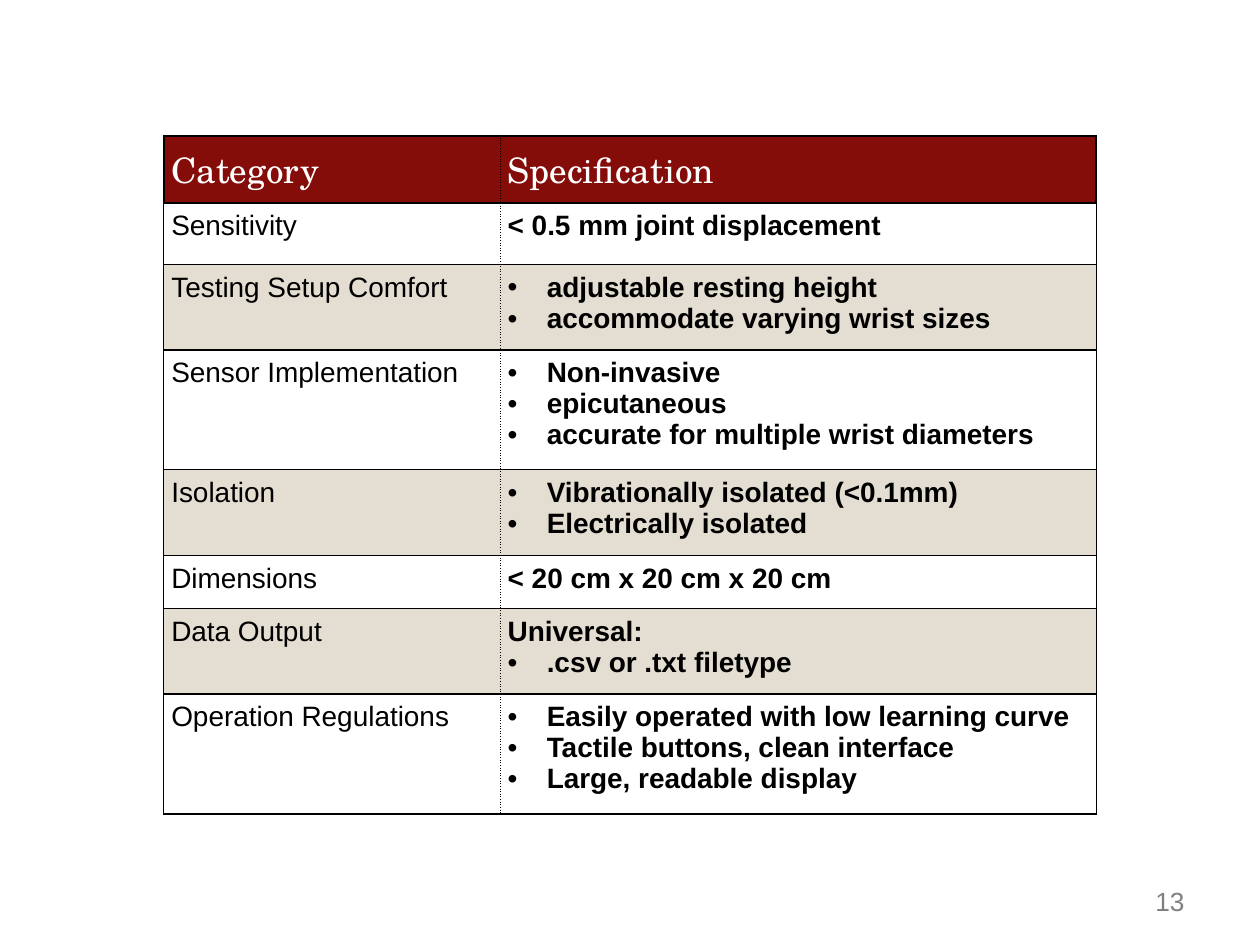
"""Build a slide with a two-column table of design specifications."""
from lxml import etree
from pptx import Presentation
from pptx import util as u
from pptx.dml.color import RGBColor
from pptx.enum import text
from pptx.oxml import ns

BLACK = RGBColor(0x00, 0x00, 0x00)
WHITE = RGBColor(0xFF, 0xFF, 0xFF)
GRAY = RGBColor(0x80, 0x80, 0x80)
MAROON = RGBColor(0x84, 0x0C, 0x09)
SAND = RGBColor(0xE3, 0xDE, 0xD1)

BULLET = "•"
HEADER = ("Category", "Specification")
SPECIFICATIONS = [
    ("Sensitivity", ["< 0.5 mm joint displacement"], 0.49),
    ("Testing Setup Comfort",
     ["•adjustable resting height", "•accommodate varying wrist sizes"], 0.68),
    ("Sensor Implementation",
     ["•Non-invasive", "•epicutaneous", "•accurate for multiple wrist diameters"], 0.95),
    ("Isolation", ["•Vibrationally isolated (<0.1mm)", "•Electrically isolated"], 0.68),
    ("Dimensions", ["< 20 cm x 20 cm x 20 cm"], 0.42),
    ("Data Output", ["Universal:", "•.csv or .txt filetype"], 0.68),
    ("Operation Regulations",
     ["•Easily operated with low learning curve", "•Tactile buttons, clean interface",
      "•Large, readable display"], 0.95),
]
PAGE_NUMBER = "13"

COLUMN_WIDTHS = (2.67, 4.73)
HEADER_HEIGHT = 0.51
TABLE_LEFT, TABLE_TOP = 1.3, 1.08
CELL_MARGIN = 0.06
BULLET_INDENT = 0.31
THIN, THICK = 0.75, 1.5

HEADER_FONT = {"name": "TeX Gyre Schola", "size": u.Pt(20), "bold": False}
CATEGORY_FONT = {"name": "Arial", "size": u.Pt(16), "bold": False}
DETAIL_FONT = {**CATEGORY_FONT, "bold": True}
NUMBER_FONT = {"name": "Arial", "size": u.Pt(15)}


def format_font(font, values, color):
    for name, value in values.items():
        setattr(font, name, value)
    font.color.rgb = color


def add_bullet(paragraph):
    properties = paragraph._p.get_or_add_pPr()
    indent = u.Inches(BULLET_INDENT)
    properties.set("marL", str(indent))
    properties.set("indent", str(-indent))
    etree.SubElement(properties, ns.qn("a:buFont"), typeface="Arial")
    etree.SubElement(properties, ns.qn("a:buChar"), char=BULLET)


def add_border(cell, side, points, dash):
    line = etree.SubElement(cell._tc.get_or_add_tcPr(), ns.qn(f"a:ln{side}"),
                            w=str(u.Pt(points)))
    fill = etree.SubElement(line, ns.qn("a:solidFill"))
    etree.SubElement(fill, ns.qn("a:srgbClr"), val=str(BLACK))
    etree.SubElement(line, ns.qn("a:prstDash"), val=dash)


def add_borders(cell, row, column, last_row):
    outer = THICK if row == 0 else THIN
    add_border(cell, "L", *((THIN, "sysDot") if column else (outer, "solid")))
    add_border(cell, "R", *((outer, "solid") if column else (THIN, "sysDot")))
    add_border(cell, "T", THICK if row < 2 else THIN, "solid")
    add_border(cell, "B", THICK if row in (0, last_row) else THIN, "solid")


def fill_cell(cell, lines, font_values, color, background):
    for side in ("left", "right", "top", "bottom"):
        setattr(cell, f"margin_{side}", u.Inches(CELL_MARGIN))
    if background is None:
        cell.fill.background()
    else:
        cell.fill.solid()
        cell.fill.fore_color.rgb = background
    frame = cell.text_frame
    for index, line in enumerate(lines):
        paragraph = frame.add_paragraph() if index else frame.paragraphs[0]
        if line.startswith(BULLET):
            add_bullet(paragraph)
        run = paragraph.add_run()
        run.text = line.removeprefix(BULLET)
        format_font(run.font, font_values, color)


def add_specification_table(slide):
    heights = [HEADER_HEIGHT] + [height for _, _, height in SPECIFICATIONS]
    contents = [[[label] for label in HEADER]]
    contents += [[[category], details] for category, details, _ in SPECIFICATIONS]
    table = slide.shapes.add_table(
        len(heights), len(COLUMN_WIDTHS), u.Inches(TABLE_LEFT), u.Inches(TABLE_TOP),
        u.Inches(sum(COLUMN_WIDTHS)), u.Inches(sum(heights))).table
    table.horz_banding = False
    for column, width in zip(table.columns, COLUMN_WIDTHS):
        column.width = u.Inches(width)
    for row, (height, cells) in enumerate(zip(heights, contents)):
        table.rows[row].height = u.Inches(height)
        for column, lines in enumerate(cells):
            cell = table.cell(row, column)
            add_borders(cell, row, column, len(heights) - 1)
            if row == 0:
                fill_cell(cell, lines, HEADER_FONT, WHITE, MAROON)
            else:
                fill_cell(cell, lines, DETAIL_FONT if column else CATEGORY_FONT,
                          BLACK, None if row % 2 else SAND)


def add_page_number(slide):
    box = slide.shapes.add_textbox(*map(u.Inches, (7.06, 6.95, 2.44, 0.4)))
    frame = box.text_frame
    frame.word_wrap = True
    frame.vertical_anchor = text.MSO_ANCHOR.MIDDLE
    paragraph = frame.paragraphs[0]
    paragraph.alignment = text.PP_ALIGN.RIGHT
    run = paragraph.add_run()
    run.text = PAGE_NUMBER
    format_font(run.font, NUMBER_FONT, GRAY)


def main():
    presentation = Presentation()
    presentation.slide_width = u.Inches(10)
    presentation.slide_height = u.Inches(7.5)
    slide = presentation.slides.add_slide(presentation.slide_layouts[6])
    add_specification_table(slide)
    add_page_number(slide)
    presentation.save("out.pptx")


if __name__ == "__main__":
    main()
